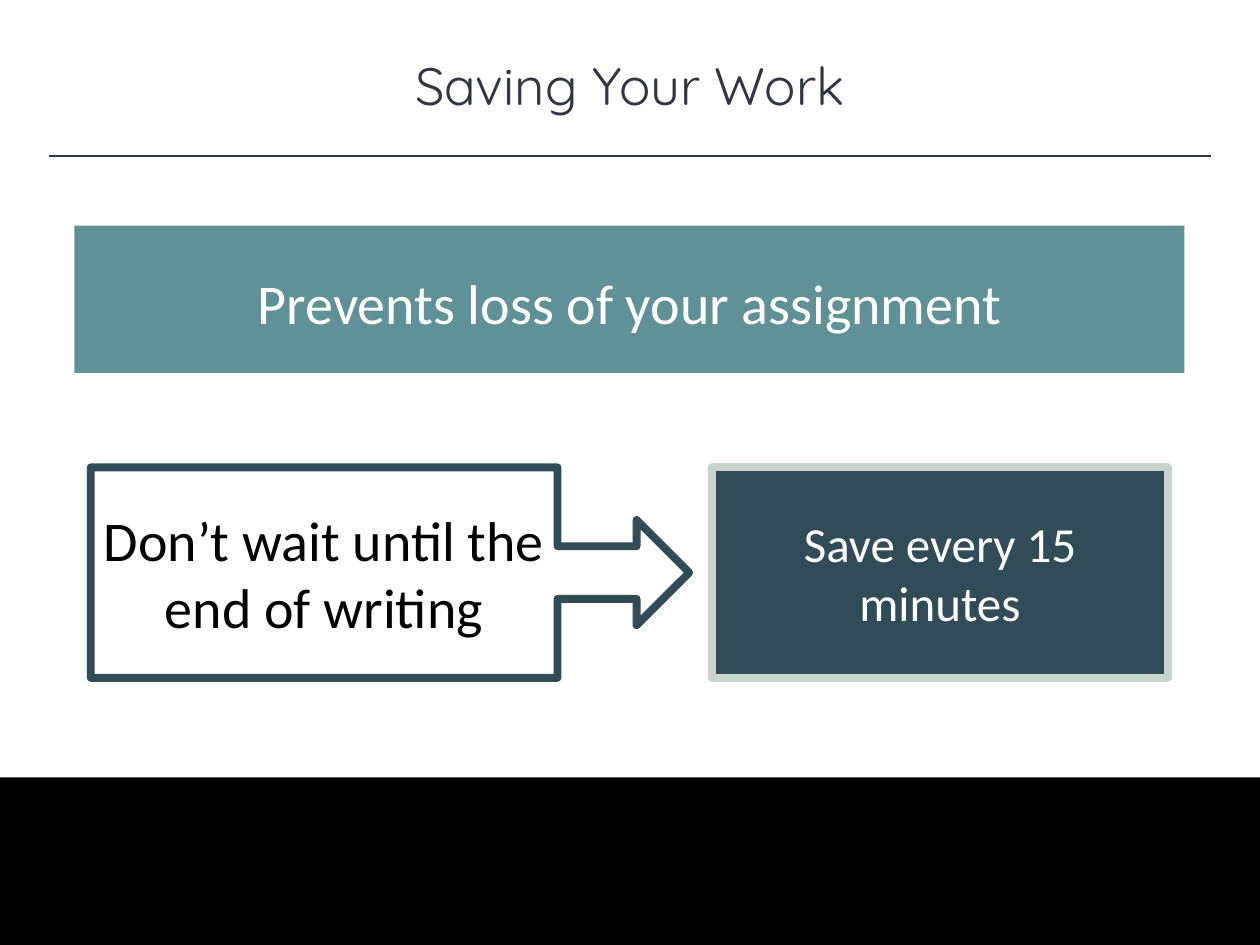
from dataclasses import dataclass
from typing import Optional

import pptx
import pptx.dml.color
import pptx.enum.shapes
import pptx.enum.text
import pptx.oxml
import pptx.oxml.ns
import pptx.util

Inches = pptx.util.Inches
Pt = pptx.util.Pt
Kind = pptx.enum.shapes.MSO_SHAPE
Align = pptx.enum.text.PP_ALIGN
Anchor = pptx.enum.text.MSO_ANCHOR

WHITE, BLACK = "FFFFFF", "000000"
INK, TEAL, NAVY, SAGE = "323542", "609196", "314C57", "C7D4CB"


@dataclass
class Label:
    text: str
    size: float
    color: str
    font: str = "Calibri"


@dataclass
class Box:
    left: float
    top: float
    width: float
    height: float
    fill: Optional[str] = None
    line: Optional[str] = None
    label: Optional[Label] = None
    kind: Kind = Kind.RECTANGLE
    adjust: tuple[float, ...] = ()


def paint(target, color: str) -> None:
    """Set a fill to solid, or a font or line colour, from a hex string."""
    if hasattr(target, "solid"):
        target.solid()
        target = target.fore_color
    else:
        target = target.color
    target.rgb = pptx.dml.color.RGBColor.from_string(color)


def write(frame, label: Label, anchor: Anchor) -> None:
    frame.word_wrap = True
    frame.auto_size = pptx.enum.text.MSO_AUTO_SIZE.NONE
    frame.vertical_anchor = anchor
    para = frame.paragraphs[0]
    para.alignment = Align.CENTER
    run = para.add_run()
    run.text = label.text
    run.font.name = label.font
    run.font.size = Pt(label.size)
    paint(run.font, label.color)


def draw(slide, box: Box) -> None:
    area = map(Inches, (box.left, box.top, box.width, box.height))
    shape = slide.shapes.add_shape(box.kind, *area)
    shape.shadow.inherit = False
    for i, value in enumerate(box.adjust):
        shape.adjustments[i] = value
    if box.fill:
        paint(shape.fill, box.fill)
    else:
        shape.fill.background()
    if box.line:
        paint(shape.line, box.line)
        shape.line.width = Pt(4.5)
    else:
        shape.line.fill.background()
    if box.label:
        write(shape.text_frame, box.label, Anchor.MIDDLE)


def rule(slide, left: float, right: float, top: float) -> None:
    """Draw the thin line under the title."""
    line = slide.shapes.add_connector(
        pptx.enum.shapes.MSO_CONNECTOR.STRAIGHT,
        Inches(left), Inches(top), Inches(right), Inches(top))
    paint(line.line, INK)
    line.line.width = Pt(1)
    props = line._element.spPr
    props.append(pptx.oxml.parse_xml(
        f"<a:effectLst {pptx.oxml.ns.nsdecls('a')}/>"))


def head(slide, label: Label) -> None:
    title = slide.shapes.title
    title.left, title.top = Inches(0), Inches(0.37)
    title.width, title.height = Inches(10), Inches(0.61)
    write(title.text_frame, label, Anchor.TOP)


BOXES = [
    Box(0, 6.17, 10, 1.33, BLACK),
    Box(0.59, 1.79, 8.81, 1.17, TEAL),
    Box(0.73, 2.08, 8.54, 0.64, TEAL,
        label=Label("Prevents loss of your assignment", 32, WHITE)),
    Box(0.72, 3.71, 4.75, 1.67, line=NAVY,
        label=Label("Don’t wait until the end of writing", 32, BLACK),
        kind=Kind.RIGHT_ARROW_CALLOUT, adjust=(0.25, 0.25, 0.25, 0.78)),
    Box(5.65, 3.71, 3.62, 1.67, NAVY, SAGE,
        Label("Save every 15 minutes", 28, WHITE)),
]


def main() -> None:
    deck = pptx.Presentation()
    deck.slide_width, deck.slide_height = Inches(10), Inches(7.5)
    slide = deck.slides.add_slide(deck.slide_layouts[5])
    paint(slide.background.fill, WHITE)
    head(slide, Label("Saving Your Work", 30, INK, "Quicksand"))
    rule(slide, 0.39, 9.61, 1.24)
    for box in BOXES:
        draw(slide, box)
    deck.save("out.pptx")


if __name__ == "__main__":
    main()
